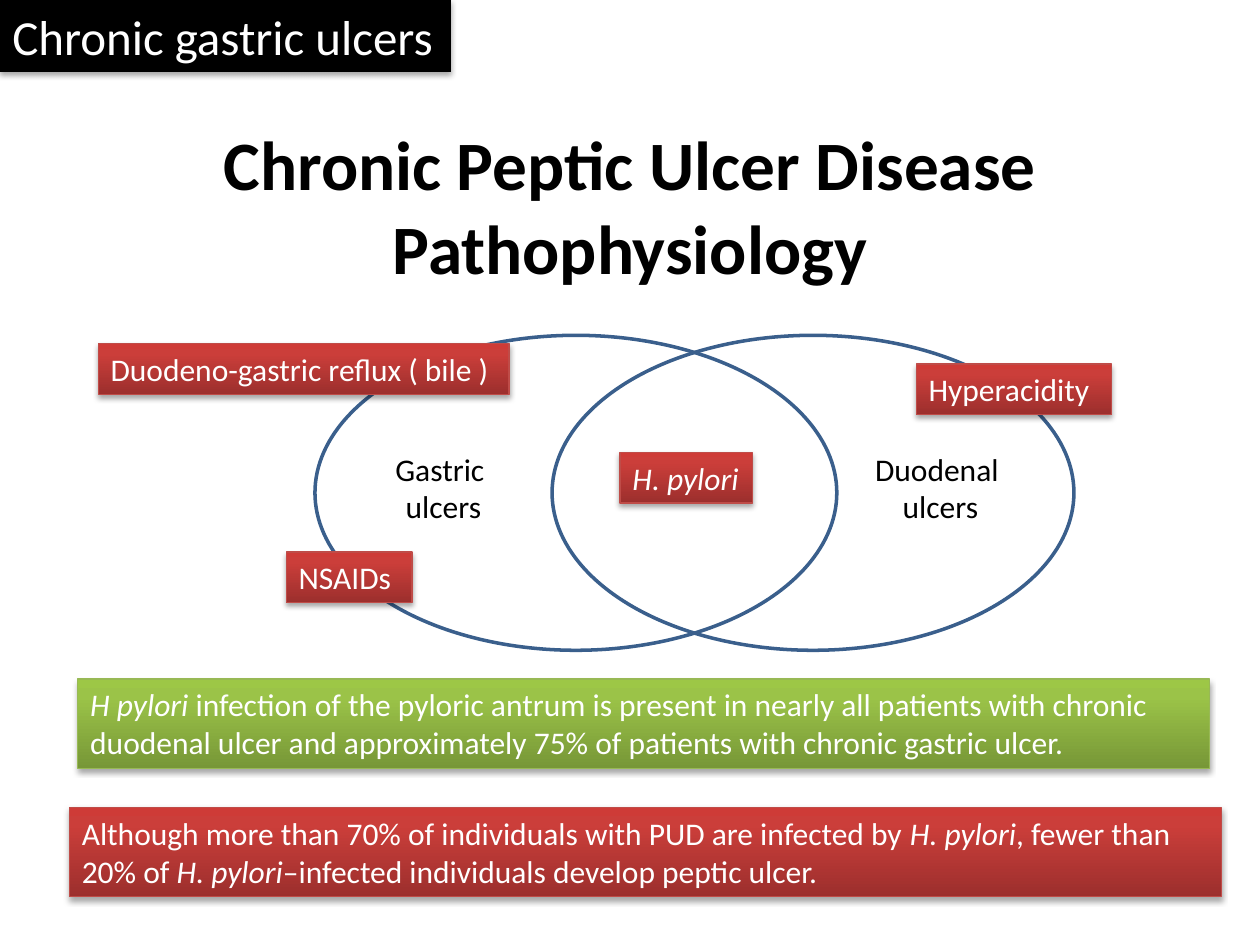
from copy import deepcopy

from lxml import etree
from pptx import Presentation
from pptx.dml.color import RGBColor
from pptx.enum.shapes import MSO_SHAPE
from pptx.enum.text import MSO_ANCHOR, MSO_AUTO_SIZE, PP_ALIGN
from pptx.oxml.ns import qn
from pptx.util import Cm, Pt

RECT, OVAL = MSO_SHAPE.RECTANGLE, MSO_SHAPE.OVAL
LEFT, CENTER = PP_ALIGN.LEFT, PP_ALIGN.CENTER
TOP, MIDDLE = MSO_ANCHOR.TOP, MSO_ANCHOR.MIDDLE
GROW, FIXED = MSO_AUTO_SIZE.SHAPE_TO_FIT_TEXT, MSO_AUTO_SIZE.NONE

COLORS = {
    "black": "000000", "white": "FFFFFF", "ring": "3A5F8C",
    "red_edge": "BF4C48", "red_dark": "9C2F2D", "red_mid": "CB3E3A", "red_light": "CE3B37",
    "green_edge": "98B955", "green_dark": "779737", "green_mid": "9BC348", "green_light": "9DC746",
}
STOPS = {"dark": 0, "mid": 0.8, "light": 1}


def rgb(name):
    return RGBColor.from_string(COLORS[name])


class Deck:
    font = "Calibri"

    def __init__(self, slide):
        self.s = slide

    def set_text(self, sp, paragraphs, color, size=18, align=LEFT, anchor=TOP, bold=None, fit=GROW):
        """Each paragraph is a list of runs; a run in a tuple is italic."""
        tf = sp.text_frame
        tf.word_wrap = True
        tf.auto_size = fit
        tf.vertical_anchor = anchor
        for i, runs in enumerate(paragraphs):
            p = tf.paragraphs[0] if i == 0 else tf.add_paragraph()
            p.alignment = align
            for run in runs:
                r = p.add_run()
                italic = isinstance(run, tuple)
                r.text = run[0] if italic else run
                if italic:
                    r.font.italic = True
            p.font.name, p.font.size, p.font.bold = self.font, Pt(size), bold
            p.font.color.rgb = rgb(color)

    def text(self, x, y, w, h, paragraphs, **style):
        sp = self.s.shapes.add_textbox(Cm(x), Cm(y), Cm(w), Cm(h))
        self.set_text(sp, paragraphs, "black", align=CENTER, **style)

    def ring(self, x, y, w, h):
        sp = self.s.shapes.add_shape(OVAL, Cm(x), Cm(y), Cm(w), Cm(h))
        sp.shadow.inherit = False
        sp.fill.background()
        sp.line.color.rgb = rgb("ring")
        sp.line.width = Pt(2)

    def drop_shadow(self, sp):
        sp.shadow.inherit = False
        effects = sp._element.spPr.find(qn("a:effectLst"))
        shadow = etree.SubElement(effects, qn("a:outerShdw"), blurRad="40000", dist="23000",
                                  dir="5400000", rotWithShape="0")
        color = etree.SubElement(shadow, qn("a:srgbClr"), val=COLORS["black"])
        etree.SubElement(color, qn("a:alpha"), val="35000")

    def gradient(self, sp, tone):
        """Fill from dark at the bottom to light at the top."""
        sp.fill.gradient()
        sp.fill.gradient_angle = 90
        stops = sp._element.spPr.find(".//" + qn("a:gsLst"))
        stops.append(deepcopy(stops[-1]))
        for stop, (shade, position) in zip(sp.fill.gradient_stops, STOPS.items()):
            stop.color.rgb = rgb(f"{tone}_{shade}")
            stop.position = position

    def box(self, x, y, w, h, runs, tone, size=18):
        sp = self.s.shapes.add_shape(RECT, Cm(x), Cm(y), Cm(w), Cm(h))
        if tone == "black":
            sp.fill.solid()
            sp.fill.fore_color.rgb = rgb(tone)
            sp.line.fill.background()
        else:
            self.gradient(sp, tone)
            sp.line.color.rgb = rgb(f"{tone}_edge")
            sp.line.width = Pt(0.75)
        self.drop_shadow(sp)
        self.set_text(sp, [runs], "white", size)


def main():
    prs = Presentation()
    prs.slide_width, prs.slide_height = Cm(25.4), Cm(19.05)
    deck = Deck(prs.slides.add_slide(prs.slide_layouts[6]))

    deck.text(1.27, 2.54, 22.86, 3.18, [["Chronic Peptic Ulcer Disease"], ["Pathophysiology"]],
              size=39.6, bold=True, anchor=MIDDLE, fit=FIXED)

    for x in (6.35, 11.13):
        deck.ring(x, 6.76, 10.52, 6.35)
    for x, w, organ in ((6.55, 4.78, "Gastric "), (17.27, 3.38, "Duodenal ")):
        deck.text(x, 8.94, w, 1.8, [[organ], ["ulcers"]])

    causes = (
        (12.5, 9.12, 2.67, ("H. pylori",)),
        (1.98, 6.93, 8.28, "Duodeno-gastric reflux ( bile )"),
        (5.77, 11.13, 2.54, "NSAIDs"),
        (18.47, 7.34, 3.94, "Hyperacidity"),
    )
    for x, y, w, cause in causes:
        deck.box(x, y, w, 1.02, [cause], "red")

    deck.box(1.57, 13.69, 22.81, 1.8, [
        ("H pylori",),
        " infection of the pyloric antrum is present in nearly all patients with chronic "
        "duodenal ulcer and approximately 75% of patients with chronic gastric ulcer.",
    ], "green")
    deck.box(1.4, 16.28, 23.22, 1.8, [
        "Although more than 70% of individuals with PUD are infected by ", ("H. pylori",),
        ", fewer than 20% of ", ("H. pylori",), "–infected individuals develop peptic ulcer.",
    ], "red")
    deck.box(0, 0, 9.09, 1.45, ["Chronic gastric ulcers"], "black", size=28)

    prs.save("out.pptx")


if __name__ == "__main__":
    main()
